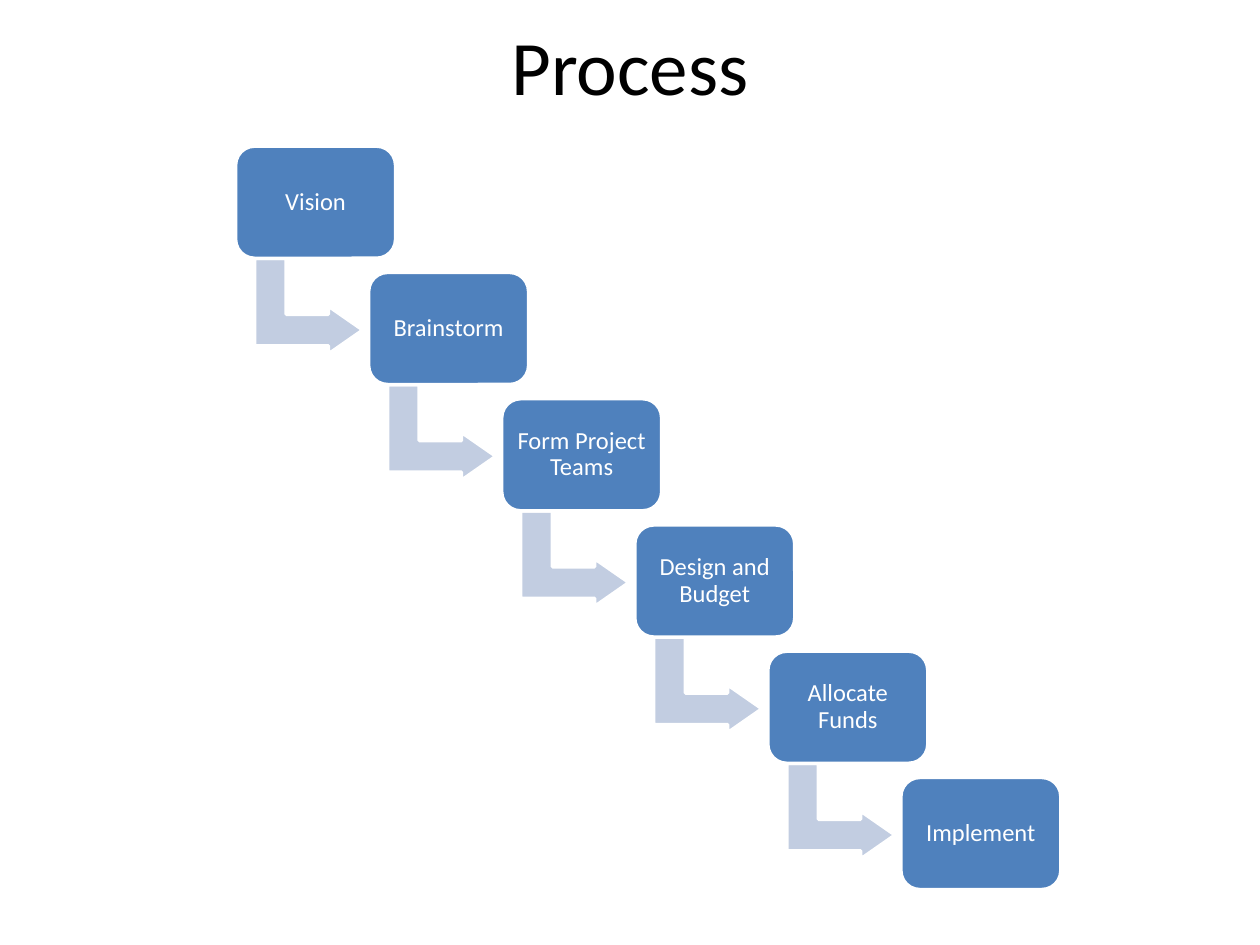
from pptx import Presentation
from pptx.dml.color import RGBColor
from pptx.enum.shapes import MSO_SHAPE
from pptx.enum.text import MSO_ANCHOR, PP_ALIGN
from pptx.util import Inches, Pt

# Content
TITLE = "Process"
STEPS = ["Vision", "Brainstorm", "Form Project Teams",
         "Design and Budget", "Allocate Funds", "Implement"]

# Style
FONT = "Calibri"
BLUE = RGBColor(0x4F, 0x81, 0xBD)
PALE_BLUE = RGBColor(0xC2, 0xCD, 0xE1)
WHITE = RGBColor(0xFF, 0xFF, 0xFF)
BLACK = RGBColor(0, 0, 0)
ROUNDED = MSO_SHAPE.ROUNDED_RECTANGLE
BENT_ARROW = MSO_SHAPE.BENT_UP_ARROW
MIDDLE = MSO_ANCHOR.MIDDLE
CENTER = PP_ALIGN.CENTER

# Staircase geometry, in inches
FIRST_LEFT, FIRST_TOP = 1.87, 1.16
LAST_LEFT, LAST_TOP = 7.15, 6.17
BOX_WIDTH, BOX_HEIGHT = 1.27, 0.89
ARROW_WIDTH, ARROW_HEIGHT = 0.76, 0.86
ARROW_OFFSET_X, ARROW_OFFSET_Y = 0.2, 0.84
INSET = 0.06


def format_text(text_frame, size, color):
    text_frame.word_wrap = True
    text_frame.vertical_anchor = MIDDLE
    paragraph = text_frame.paragraphs[0]
    paragraph.alignment = CENTER
    font = paragraph.runs[0].font
    font.name = FONT
    font.size = Pt(size)
    font.color.rgb = color


def add_block(slide, kind, left, top, width, height, fill, adjustments):
    shape = slide.shapes.add_shape(
        kind, Inches(left), Inches(top), Inches(width), Inches(height))
    shape.shadow.inherit = False
    shape.fill.solid()
    shape.fill.fore_color.rgb = fill
    shape.line.color.rgb = WHITE
    shape.line.width = Pt(2)
    for index, value in enumerate(adjustments):
        shape.adjustments[index] = value
    return shape


def add_step(slide, label, left, top):
    box = add_block(slide, ROUNDED, left, top, BOX_WIDTH, BOX_HEIGHT, BLUE, [0.17])
    text_frame = box.text_frame
    text_frame.text = label
    text_frame.margin_left = text_frame.margin_right = Inches(INSET)
    text_frame.margin_top = text_frame.margin_bottom = Inches(INSET)
    text_frame.paragraphs[0].line_spacing = 0.9
    format_text(text_frame, 14, WHITE)


def main():
    presentation = Presentation()
    presentation.slide_width = Inches(10)
    presentation.slide_height = Inches(7.5)
    slide = presentation.slides.add_slide(presentation.slide_layouts[5])

    # Title
    title = slide.shapes.title
    title.left, title.top = Inches(0.5), Inches(0)
    title.width, title.height = Inches(9), Inches(1.03)
    title.text_frame.text = TITLE
    format_text(title.text_frame, 44, BLACK)

    # Descending steps, each but the last with an arrow to the next
    last = len(STEPS) - 1
    step_x = (LAST_LEFT - FIRST_LEFT) / last
    step_y = (LAST_TOP - FIRST_TOP) / last
    for index, label in enumerate(STEPS):
        left = FIRST_LEFT + index * step_x
        top = FIRST_TOP + index * step_y
        if index < last:
            arrow = add_block(slide, BENT_ARROW, left + ARROW_OFFSET_X,
                              top + ARROW_OFFSET_Y, ARROW_WIDTH, ARROW_HEIGHT,
                              PALE_BLUE, [0.33, 0.25, 0.36])
            arrow.rotation = 90
        add_step(slide, label, left, top)

    presentation.save("out.pptx")


if __name__ == "__main__":
    main()
